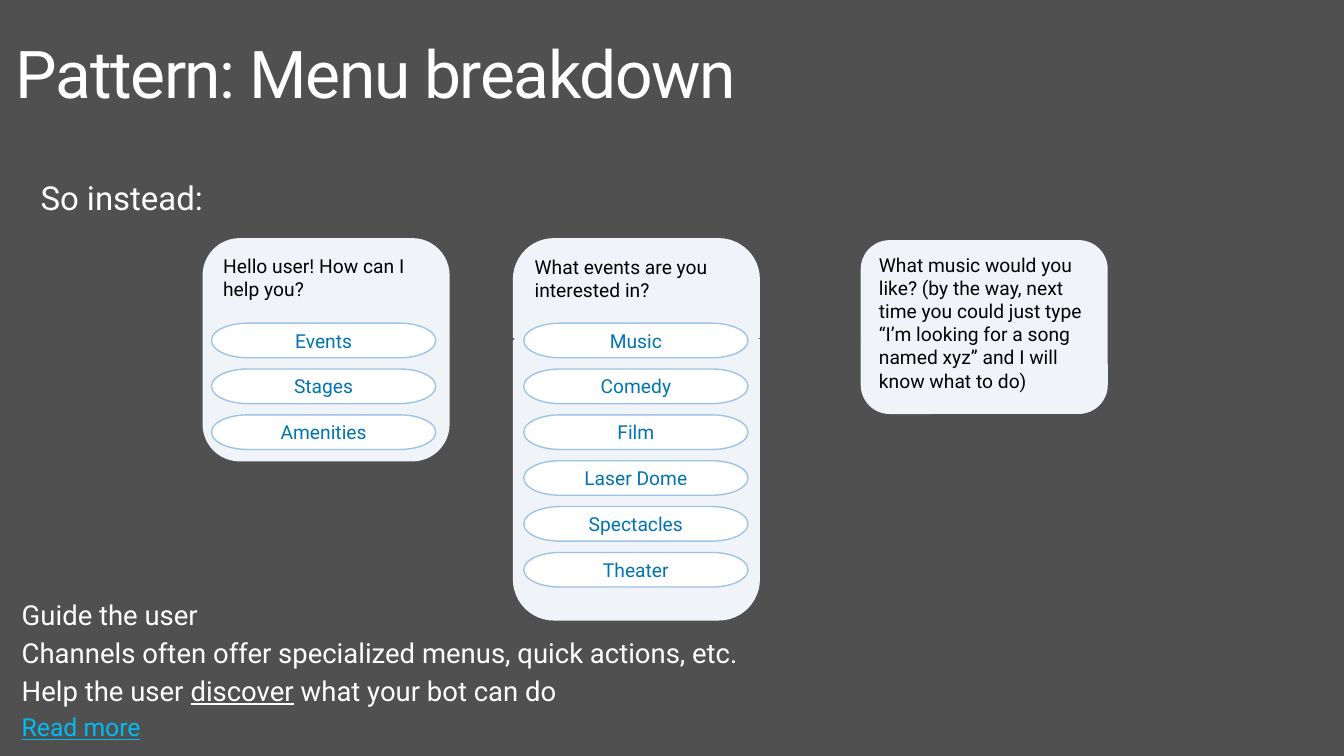
from lxml import etree
from pptx import Presentation
from pptx.dml.color import RGBColor
from pptx.enum.dml import MSO_LINE
from pptx.enum.shapes import MSO_CONNECTOR, MSO_SHAPE
from pptx.enum.text import MSO_ANCHOR, MSO_AUTO_SIZE, PP_ALIGN
from pptx.oxml.ns import qn
from pptx.util import Inches, Pt

CARD, PILL = MSO_SHAPE.ROUNDED_RECTANGLE, MSO_SHAPE.FLOWCHART_TERMINATOR
TOP, MIDDLE = MSO_ANCHOR.TOP, MSO_ANCHOR.MIDDLE
LEFT, CENTER = PP_ALIGN.LEFT, PP_ALIGN.CENTER
STRAIGHT, SOLID = MSO_CONNECTOR.STRAIGHT, MSO_LINE.SOLID
NO_FIT = MSO_AUTO_SIZE.NONE

COLORS = {"back": "505050", "white": "FFFFFF", "card": "F0F4F8", "edge": "9DC3E6",
          "pill": "0074AF", "black": "000000", "link": "00BCF2"}
FONT = "Roboto"

TITLE = "Pattern: Menu breakdown"
LEAD = [[("So instead:", 24, "white", False)]]
NOTES = [
    [("Guide the user", 20, "white", False)],
    [("Channels often offer specialized menus, quick actions, etc.", 20, "white", False)],
    [("Help the user ", 20, "white", False), ("discover", 20, "white", True),
     (" what your bot can do", 20, "white", False)],
    [("Read more", 18, "link", True)],
]
CARDS = [
    ("Hello user! How can I help you?", 2.05, 2.41, 2.26, 2.14,
     ["Events", "Stages", "Amenities"]),
    ("What events are you interested in?", 5.19, 2.41, 3.87, 5.3,
     ["Music", "Comedy", "Film", "Laser Dome", "Spectacles", "Theater"]),
    ("What music would you like? (by the way, next time you could just type "
     "“I’m looking for a song named xyz” and I will know what to do)",
     8.71, 2.43, 1.76, 0, []),
]
ARROWS = [(4.55, 5.21), (7.68, 8.71)]
CARD_W, PILL_W, PILL_H = 2.5, 2.27, 0.35
PILL_TOP, PILL_STEP, ARROW_Y = 3.27, 0.464, 3.43


def color(name):
    return RGBColor.from_string(COLORS[name])


def place(shape, x, y, w, h):
    shape.left, shape.top = Inches(x), Inches(y)
    shape.width, shape.height = Inches(w), Inches(h)


def add_run(para, text, size, tint, under=False):
    run = para.add_run()
    run.text = text
    font = run.font
    font.name, font.size, font.color.rgb = FONT, Pt(size), color(tint)
    if under:
        font.underline = True
    return run


def set_frame(shape, side, edge):
    frame = shape.text_frame
    frame.word_wrap, frame.auto_size = True, NO_FIT
    frame.vertical_anchor = TOP
    frame.margin_left = frame.margin_right = Inches(side)
    frame.margin_top = frame.margin_bottom = Inches(edge)
    return frame


def fill_lines(shape, lines):
    frame = set_frame(shape, 0.2, 0.16)
    for i, line in enumerate(lines):
        para = frame.add_paragraph() if i else frame.paragraphs[0]
        props = para._p.get_or_add_pPr()
        props.set("marL", "0")
        props.set("indent", "0")
        etree.SubElement(props, qn("a:buNone"))
        para.line_spacing, para.space_before, para.space_after = 0.9, Pt(0), Pt(6)
        for part in line:
            add_run(para, *part)


def add_box(kind, spot, text, fill, tint, edge, align, anchor):
    box = slide.shapes.add_shape(kind, *map(Inches, spot))
    box.shadow.inherit = False
    box.fill.solid()
    box.fill.fore_color.rgb = color(fill)
    if edge:
        box.line.color.rgb, box.line.width = color(edge), Pt(1)
    else:
        box.line.fill.background()
    frame = box.text_frame
    frame.word_wrap, frame.vertical_anchor = True, anchor
    para = frame.paragraphs[0]
    para.alignment = align
    add_run(para, text, 14, tint)


def add_arrow(start, end):
    line = slide.shapes.add_connector(
        STRAIGHT, Inches(start), Inches(ARROW_Y), Inches(end), Inches(ARROW_Y))
    line.line.color.rgb, line.line.width = color("back"), Pt(0.75)
    line.line.dash_style = SOLID
    etree.SubElement(line.line._get_or_add_ln(), qn("a:tailEnd"), type="triangle")
    etree.SubElement(line._element.spPr, qn("a:effectLst"))


deck = Presentation()
deck.slide_width, deck.slide_height = Inches(13.6), Inches(7.65)
slide = deck.slides.add_slide(deck.slide_layouts[1])
slide.background.fill.solid()
slide.background.fill.fore_color.rgb = color("back")

title, body = slide.placeholders
place(title, 0, 0.32, 13, 1)
head = set_frame(title, 0.16, 0.1).paragraphs[0]
head.alignment, head.line_spacing = LEFT, 0.9
run = add_run(head, TITLE, 48, "white")
run.font._element.set("spc", "-100")

place(body, 0.02, 5.93, 13.13, 1.7)
fill_lines(body, NOTES)
lead = slide.shapes.add_textbox(Inches(0.21), Inches(1.68), Inches(12.65), Inches(0.69))
fill_lines(lead, LEAD)

for text, x, y, h, left, items in CARDS:
    add_box(CARD, (x, y, CARD_W, h), text, "card", "black", None, LEFT, TOP)
    for i, item in enumerate(items):
        spot = (left, PILL_TOP + i * PILL_STEP, PILL_W, PILL_H)
        add_box(PILL, spot, item, "white", "pill", "edge", CENTER, MIDDLE)
for start, end in ARROWS:
    add_arrow(start, end)

deck.save("out.pptx")
